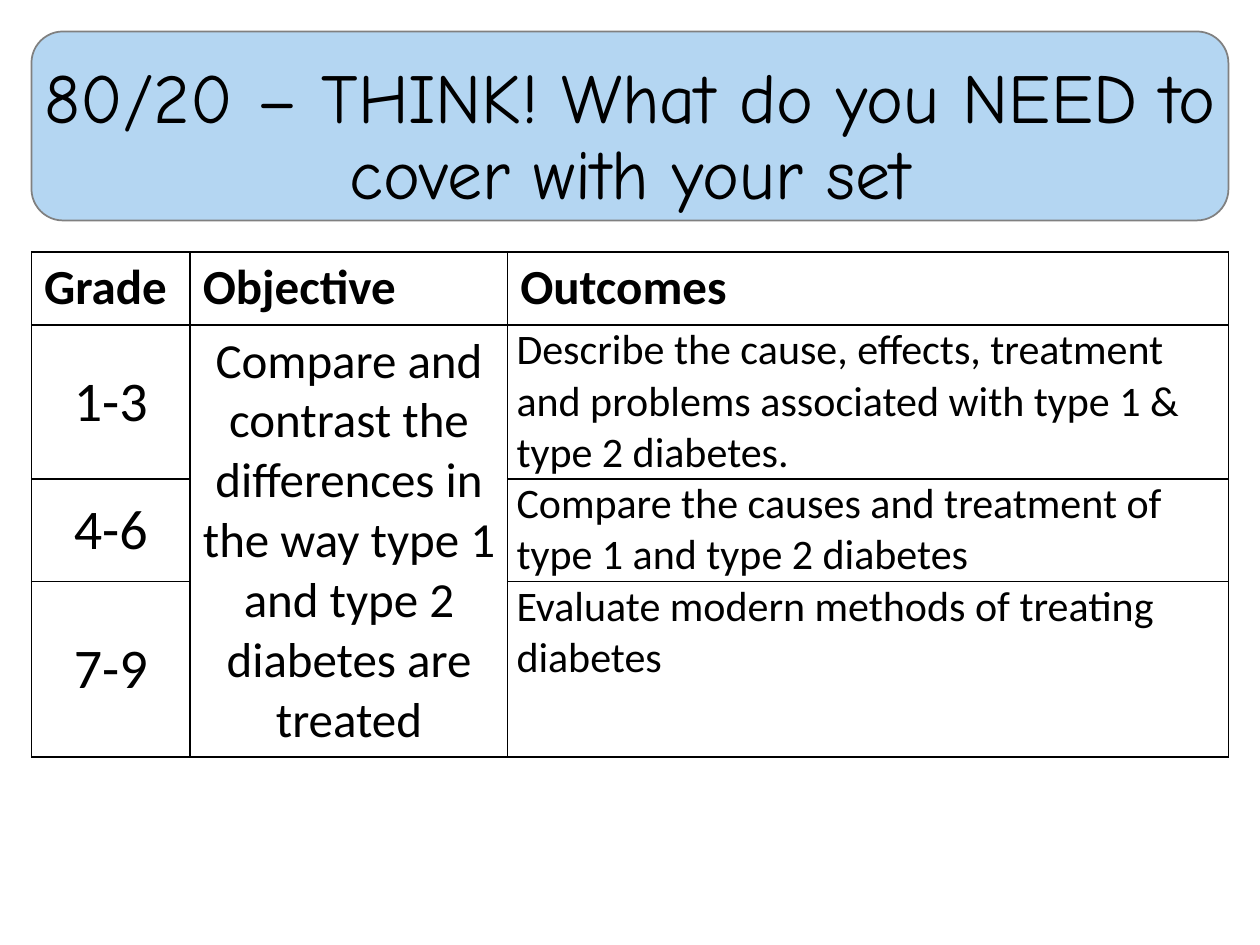
"""Build the slide of diabetes objectives and outcomes by grade."""
from dataclasses import dataclass

from lxml import etree
from pptx import Presentation
from pptx.dml.color import RGBColor
from pptx.enum import shapes, text
from pptx.oxml import ns
from pptx.util import Inches, Pt

BLACK = RGBColor(0x00, 0x00, 0x00)
WHITE = RGBColor(0xFF, 0xFF, 0xFF)
GREY = RGBColor(0x80, 0x80, 0x80)
PALE_BLUE = RGBColor(0xB4, 0xD6, 0xF2)
MARGIN = 0.25
CONTENT_WIDTH = 9.5
COLUMN_WIDTHS = (1.26, 2.52, 5.72)
ROW_HEIGHTS = (0.58, 1.22, 0.81, 1.39)


@dataclass(frozen=True)
class CellStyle:
    size: int
    bold: bool = False
    centred: bool = False
    side_inset: float = 0.1
    end_inset: float = 0.05


HEADER = CellStyle(28, bold=True)
GRADE = CellStyle(32, centred=True)
OBJECTIVE = CellStyle(28, centred=True)
OUTCOME = CellStyle(24, side_inset=0.07, end_inset=0)

HEADINGS = ("Grade", "Objective", "Outcomes")
OBJECTIVE_TEXT = (
    "Compare and contrast the differences in the way "
    "type 1 and type 2 diabetes are treated"
)
OUTCOMES = (
    ("1-3", "Describe the cause, effects, treatment and problems "
            "associated with type 1 & type 2 diabetes."),
    ("4-6", "Compare the causes and treatment of type 1 and type 2 diabetes"),
    ("7-9", "Evaluate modern methods of treating diabetes"),
)


def add_title(slide, wording: str) -> None:
    """Place the title placeholder over a rounded panel."""
    box = (Inches(MARGIN), Inches(MARGIN), Inches(CONTENT_WIDTH), Inches(1.5))
    panel = slide.shapes.add_shape(shapes.MSO_SHAPE.ROUNDED_RECTANGLE, *box)
    panel.shadow.inherit = False
    panel.fill.solid()
    panel.fill.fore_color.rgb = PALE_BLUE
    panel.line.color.rgb = GREY
    panel.line.width = Pt(1)

    title = slide.shapes.title
    title.element.addprevious(panel.element)
    title.left, title.top, title.width, title.height = box
    frame = title.text_frame
    frame.text = wording
    frame.word_wrap = True
    frame.auto_size = text.MSO_AUTO_SIZE.NONE
    frame.vertical_anchor = text.MSO_ANCHOR.BOTTOM
    paragraph = frame.paragraphs[0]
    paragraph.alignment = text.PP_ALIGN.CENTER
    paragraph.line_spacing = 0.9
    font = paragraph.runs[0].font
    font.name, font.size, font.color.rgb = "Comic Neue", Pt(40), BLACK


def format_cell(cell) -> None:
    """Give a cell black borders and a white fill."""
    properties = cell._tc.get_or_add_tcPr()
    for side in ("lnL", "lnR", "lnT", "lnB"):
        line = etree.SubElement(properties, ns.qn(f"a:{side}"), w=str(Pt(1)))
        fill = etree.SubElement(line, ns.qn("a:solidFill"))
        etree.SubElement(fill, ns.qn("a:srgbClr"), val=str(BLACK))
    cell.fill.solid()
    cell.fill.fore_color.rgb = WHITE


def write_cell(cell, wording: str, style: CellStyle) -> None:
    """Write text in a cell in the given style."""
    cell.text_frame.text = wording
    cell.margin_left = cell.margin_right = Inches(style.side_inset)
    cell.margin_top = cell.margin_bottom = Inches(style.end_inset)
    paragraph = cell.text_frame.paragraphs[0]
    if style.centred:
        cell.vertical_anchor = text.MSO_ANCHOR.MIDDLE
        paragraph.alignment = text.PP_ALIGN.CENTER
    font = paragraph.runs[0].font
    font.name, font.size, font.bold = "Calibri", Pt(style.size), style.bold
    font.color.rgb = BLACK


def add_outcomes_table(slide) -> None:
    """Add the table of grades, objective and outcomes."""
    table = slide.shapes.add_table(
        len(ROW_HEIGHTS), len(COLUMN_WIDTHS), Inches(MARGIN), Inches(2),
        Inches(CONTENT_WIDTH), Inches(sum(ROW_HEIGHTS)),
    ).table
    for column, width in zip(table.columns, COLUMN_WIDTHS):
        column.width = Inches(width)
    for row, height in zip(table.rows, ROW_HEIGHTS):
        row.height = Inches(height)
    for cell in table.iter_cells():
        format_cell(cell)

    for column_index, heading in enumerate(HEADINGS):
        write_cell(table.cell(0, column_index), heading, HEADER)
    for row_index, (grade, outcome) in enumerate(OUTCOMES, start=1):
        write_cell(table.cell(row_index, 0), grade, GRADE)
        write_cell(table.cell(row_index, 2), outcome, OUTCOME)
    table.cell(1, 1).merge(table.cell(len(OUTCOMES), 1))
    write_cell(table.cell(1, 1), OBJECTIVE_TEXT, OBJECTIVE)


def main() -> None:
    """Build and save the presentation."""
    presentation = Presentation()
    presentation.slide_width, presentation.slide_height = Inches(10), Inches(7.5)
    slide = presentation.slides.add_slide(presentation.slide_layouts[0])
    subtitle = slide.placeholders[1].element
    subtitle.getparent().remove(subtitle)
    add_title(slide, "80/20 – THINK! What do you NEED to cover with your set")
    add_outcomes_table(slide)
    presentation.save("out.pptx")


if __name__ == "__main__":
    main()
